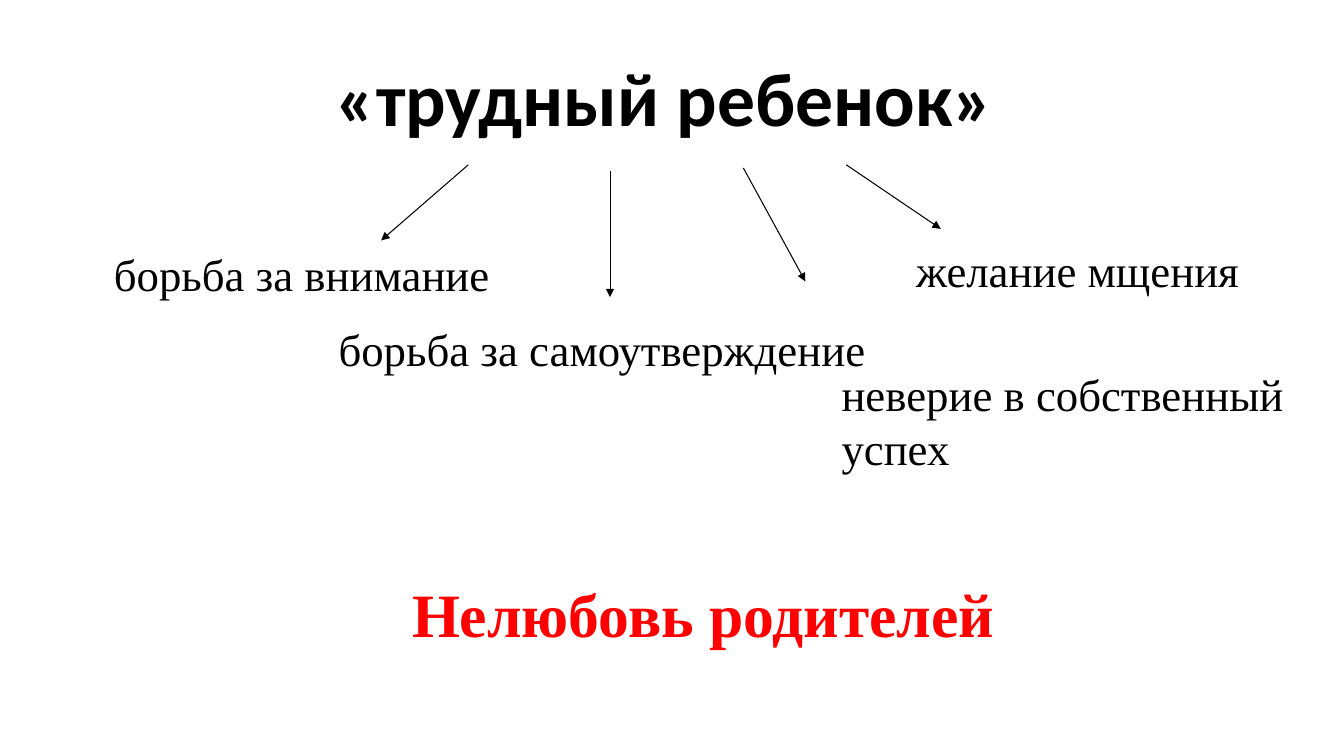
from dataclasses import dataclass

from lxml import etree
from pptx import Presentation
from pptx.dml.color import RGBColor
from pptx.enum.shapes import MSO_CONNECTOR
from pptx.enum.text import MSO_AUTO_SIZE, PP_ALIGN
from pptx.oxml.ns import qn
from pptx.util import Pt

PX = 9525  # EMU per px, 96 px to the inch
STRAIGHT = MSO_CONNECTOR.STRAIGHT
FIT_SHAPE = MSO_AUTO_SIZE.SHAPE_TO_FIT_TEXT
LEFT, CENTER, JUSTIFY = PP_ALIGN.LEFT, PP_ALIGN.CENTER, PP_ALIGN.JUSTIFY


@dataclass(frozen=True)
class Theme:
    ink: str = "000000"
    accent: str = "FF0000"
    halo: str = "FFFFFF"
    heading_font: str = "Calibri"
    body_font: str = "Times New Roman"
    heading_size: int = 54
    cause_size: int = 32
    root_size: int = 44
    line_width: float = 0.75


THEME = Theme()
HEADING = {"name": THEME.heading_font, "size": Pt(THEME.heading_size), "bold": True}
CAUSE = {"name": THEME.body_font, "size": Pt(THEME.cause_size)}
ROOT = {"name": THEME.body_font, "size": Pt(THEME.root_size), "bold": True}
SPACED = {"alignment": JUSTIFY, "line_spacing": 1.07, "space_after": Pt(8)}

# Arrows: start x, start y, end x, end y
ARROWS = [
    (446, 157, 363, 229),
    (581, 163, 581, 283),
    (708, 160, 767, 268),
    (806, 157, 896, 218),
]

# Causes: box (left, top, width, height), lines, paragraph format
CAUSES = [
    ((99, 227, 381, 65), ["борьба за внимание"], SPACED),
    ((313, 302, 539, 61), ["борьба за самоутверждение"], {}),
    ((792, 345, 455, 113), ["неверие в собственный", "успех"], {}),
    ((863, 226, 330, 61), ["желание мщения"], {}),
]


def apply(target, values):
    for name, value in values.items():
        setattr(target, name, value)


def add_arrow(slide, ends):
    arrow = slide.shapes.add_connector(STRAIGHT, *(n * PX for n in ends))
    arrow.line.color.rgb = RGBColor.from_string(THEME.ink)
    arrow.line.width = Pt(THEME.line_width)
    etree.SubElement(arrow.line._ln, qn("a:tailEnd"), type="triangle")
    etree.SubElement(arrow._element.spPr, qn("a:effectLst"))


def add_label(slide, box, lines, font, color, layout):
    label = slide.shapes.add_textbox(*(n * PX for n in box))
    frame = label.text_frame
    apply(frame, {"word_wrap": False, "auto_size": FIT_SHAPE})
    frame.text = "\n".join(lines)
    for paragraph in frame.paragraphs:
        apply(paragraph, {"alignment": LEFT, **layout})
        for run in paragraph.runs:
            apply(run.font, font)
            run.font.color.rgb = RGBColor.from_string(color)
    return label


def outline_text(label, color):
    """Put a thin outline around the letters."""
    for run in label.text_frame.paragraphs[0].runs:
        line = etree.Element(qn("a:ln"), w=str(Pt(THEME.line_width)))
        fill = etree.SubElement(line, qn("a:solidFill"))
        etree.SubElement(fill, qn("a:srgbClr"), val=color)
        run.font._element.insert(0, line)


def main():
    deck = Presentation()
    apply(deck, {"slide_width": 1280 * PX, "slide_height": 720 * PX})
    slide = deck.slides.add_slide(deck.slide_layouts[6])

    # Arrows from the heading to the causes
    for ends in ARROWS:
        add_arrow(slide, ends)

    # Heading
    heading = add_label(slide, (273, 44, 720, 97), ["«трудный ребенок»"],
                        HEADING, THEME.ink, {"alignment": CENTER})
    outline_text(heading, THEME.halo)

    # Causes
    for box, lines, layout in CAUSES:
        add_label(slide, box, lines, CAUSE, THEME.ink, layout)

    # Root of the problem
    add_label(slide, (383, 544, 581, 81), ["Нелюбовь родителей"],
              ROOT, THEME.accent, {})

    deck.save("out.pptx")


if __name__ == "__main__":
    main()
